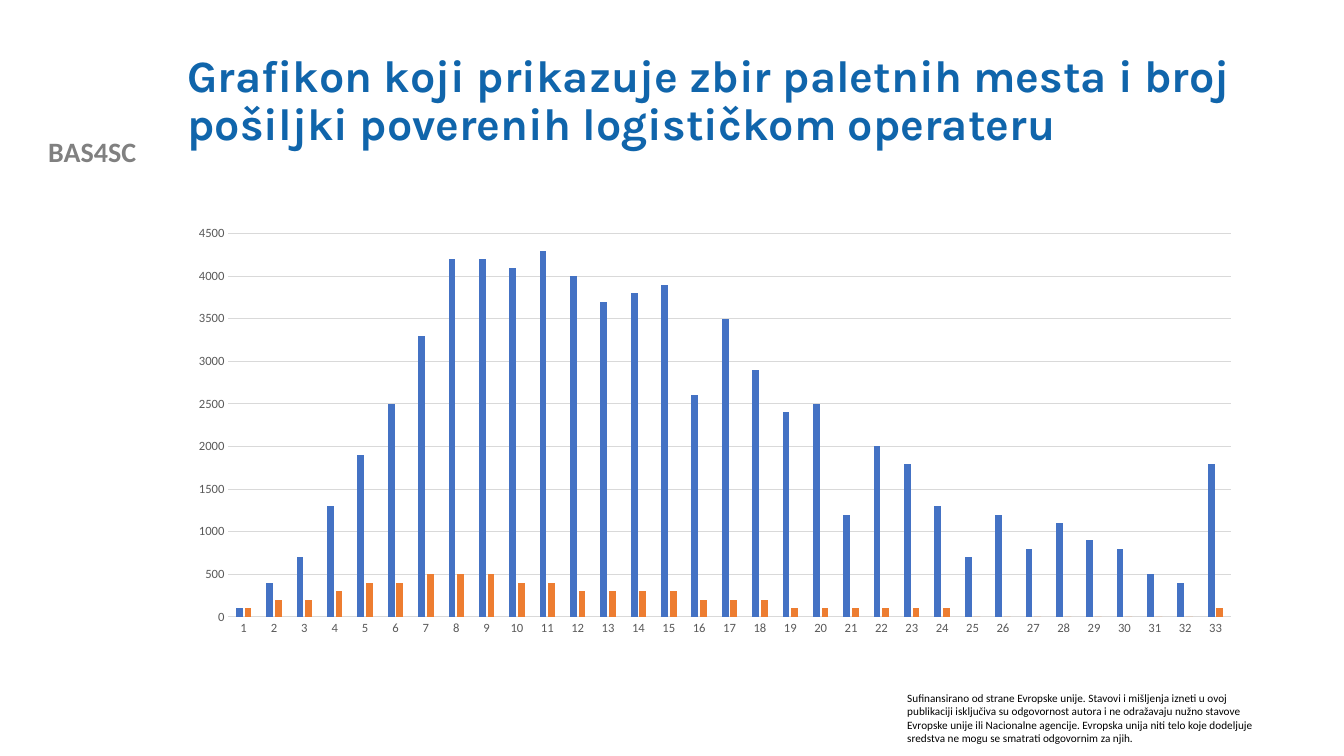
from pptx import Presentation
from pptx.chart.data import CategoryChartData
from pptx.dml.color import RGBColor
from pptx.enum.chart import XL_CHART_TYPE, XL_TICK_MARK
from pptx.enum.text import MSO_ANCHOR, MSO_AUTO_SIZE, PP_ALIGN
from pptx.util import Inches, Pt

TITLE = "Grafikon koji prikazuje zbir paletnih mesta i broj pošiljki poverenih logističkom operateru"
FUNDING_NOTE = (
    "Sufinansirano od strane Evropske unije. Stavovi i mišljenja izneti u ovoj publikaciji "
    "isključiva su odgovornost autora i ne odražavaju nužno stavove Evropske unije ili "
    "Nacionalne agencije. Evropska unija niti telo koje dodeljuje sredstva ne mogu se "
    "smatrati odgovornim za njih."
)
PALLET_PLACES = [
    100, 400, 700, 1300, 1900, 2500, 3300, 4200, 4200, 4100, 4300,
    4000, 3700, 3800, 3900, 2600, 3500, 2900, 2400, 2500, 1200, 2000,
    1800, 1300, 700, 1200, 800, 1100, 900, 800, 500, 400, 1800,
]
SHIPMENTS = [
    100, 200, 200, 300, 400, 400, 500, 500, 500, 400, 400,
    300, 300, 300, 300, 200, 200, 200, 100, 100, 100, 100,
    100, 100, 0, 0, 0, 0, 0, 0, 0, 0, 100,
]
SERIES = [("Series 1", PALLET_PLACES, "4472C4"), ("Series 2", SHIPMENTS, "ED7D31")]
GRID_COLOR = "D9D9D9"


def rgb(color):
    return RGBColor.from_string(color)


def format_font(font, size, color, name="Calibri", bold=False):
    font.name = name
    font.size = Pt(size)
    font.bold = bold
    font.color.rgb = rgb(color)


def write_text(shape, text, align=PP_ALIGN.LEFT, anchor=MSO_ANCHOR.TOP,
               line_spacing=None, auto_size=MSO_AUTO_SIZE.SHAPE_TO_FIT_TEXT, **font_format):
    frame = shape.text_frame
    frame.word_wrap = True
    frame.auto_size = auto_size
    frame.vertical_anchor = anchor
    para = frame.paragraphs[0]
    para.alignment = align
    para.line_spacing = line_spacing
    span = para.add_run()
    span.text = text
    format_font(span.font, **font_format)


def place(shape, left, top, width, height):
    shape.left, shape.top = Inches(left), Inches(top)
    shape.width, shape.height = Inches(width), Inches(height)


def add_text_box(page, bounds, text, **text_format):
    box = page.shapes.add_textbox(*map(Inches, bounds))
    write_text(box, text, **text_format)


def format_line(line, color):
    line.color.rgb = rgb(color)
    line.width = Pt(0.75)


def add_column_chart(page, bounds):
    data = CategoryChartData()
    data.categories = [str(number) for number in range(1, len(PALLET_PLACES) + 1)]
    for name, values, _ in SERIES:
        data.add_series(name, values)
    chart = page.shapes.add_chart(
        XL_CHART_TYPE.COLUMN_CLUSTERED, *map(Inches, bounds), data).chart
    chart.has_legend = False
    chart.has_title = False
    format_font(chart.font, 10, "000000")

    plot = chart.plots[0]
    plot.vary_by_categories = False
    plot.gap_width = 219
    plot.overlap = -27
    for series, (_, _, color) in zip(plot.series, SERIES):
        series.format.fill.solid()
        series.format.fill.fore_color.rgb = rgb(color)

    for axis in (chart.category_axis, chart.value_axis):
        axis.major_tick_mark = axis.minor_tick_mark = XL_TICK_MARK.NONE
        format_font(axis.tick_labels.font, 9, "595959")
    format_line(chart.category_axis.format.line, GRID_COLOR)
    value_axis = chart.value_axis
    value_axis.minimum_scale, value_axis.maximum_scale = 0, 4500
    value_axis.major_unit = 500
    value_axis.format.line.fill.background()
    value_axis.has_major_gridlines = True
    format_line(value_axis.major_gridlines.format.line, GRID_COLOR)


def main():
    deck = Presentation()
    deck.slide_width, deck.slide_height = Inches(13.33), Inches(7.5)
    page = deck.slides.add_slide(deck.slide_layouts[5])

    add_text_box(page, (0, 1.29, 1.83, 0.44), "BAS4SC", align=PP_ALIGN.CENTER,
                 size=20, color="808080", bold=True)
    add_text_box(page, (8.9, 6.81, 3.7, 0.64), FUNDING_NOTE, size=8, color="000000")

    title = page.shapes.title
    place(title, 1.76, 0.4, 10.66, 1.22)
    write_text(title, TITLE, anchor=MSO_ANCHOR.MIDDLE, line_spacing=0.9,
               auto_size=MSO_AUTO_SIZE.NONE, size=32, color="1065AB", name="Karla", bold=True)

    add_column_chart(page, (1.76, 2.16, 10.66, 4.23))
    deck.save("out.pptx")


if __name__ == "__main__":
    main()
